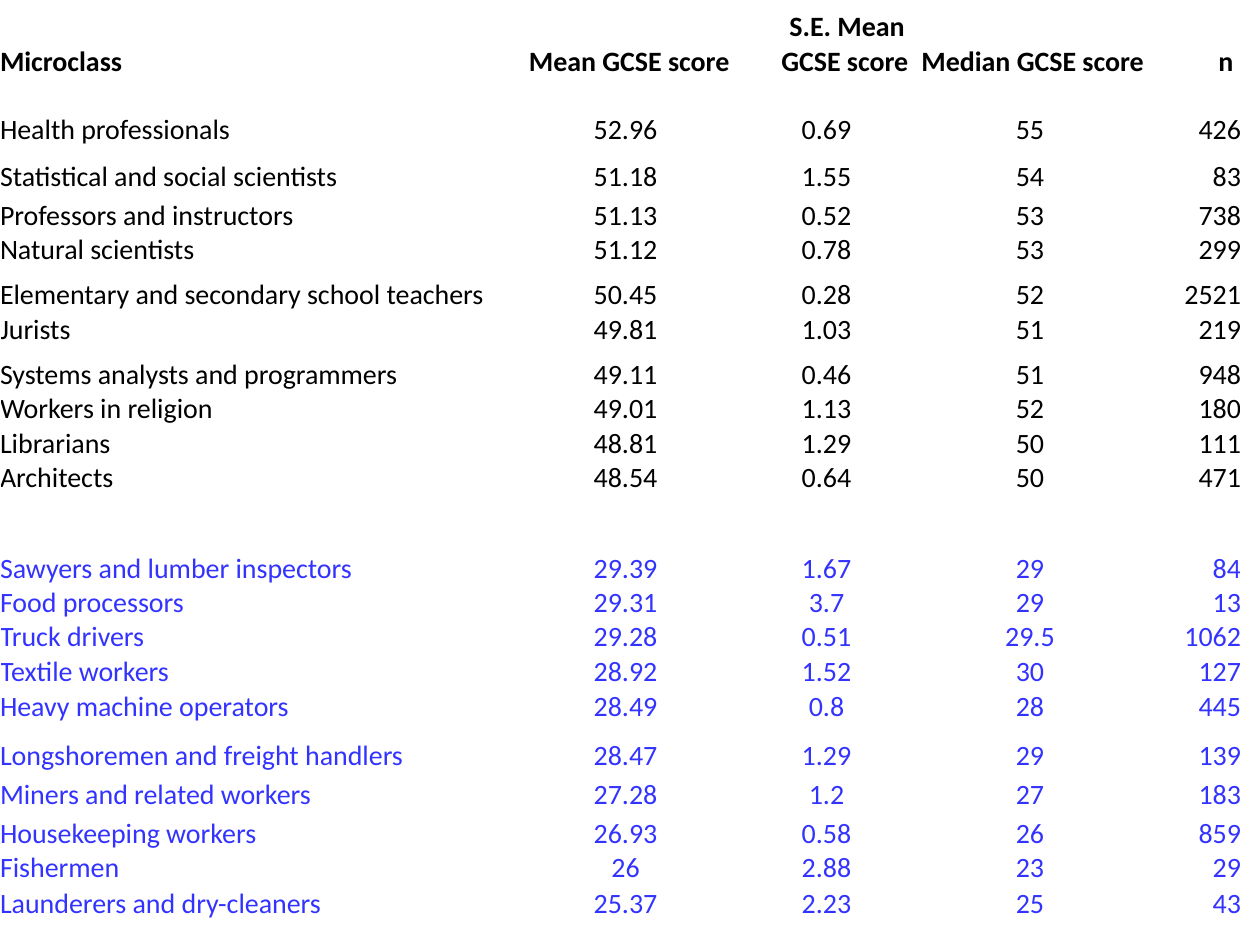
from dataclasses import dataclass

from lxml.etree import SubElement
from pptx import Presentation
from pptx.dml.color import RGBColor
from pptx.enum.text import MSO_ANCHOR, PP_ALIGN
from pptx.oxml.ns import qn
from pptx.util import Inches, Pt


@dataclass(frozen=True)
class Theme:
    font: str = "Calibri"
    size: int = 16
    top: RGBColor = RGBColor(0, 0, 0)
    bottom: RGBColor = RGBColor(0x33, 0x33, 0xFF)


THEME = Theme()
LEFT, CENTER, RIGHT = PP_ALIGN.LEFT, PP_ALIGN.CENTER, PP_ALIGN.RIGHT
BODY_ALIGN = (LEFT, CENTER, CENTER, CENTER, RIGHT)
COL_WIDTHS = (4.08, 1.77, 1.42, 1.81, 0.77)
LINE_HEIGHT = 0.27
TALL_ROWS = {4: 0.37, 5: 0.31, 7: 0.36, 9: 0.36, 14: 0.45,
             19: 0.28, 20: 0.39, 21: 0.31, 22: 0.31, 24: 0.28}
TALL_ROWS = {row: height for row, height in TALL_ROWS.items() if row < 14} | {
    14: 0.45, 18: 0.28, 19: 0.39, 20: 0.31, 21: 0.31, 23: 0.28}

HEADERS = (
    (0, 0, "Microclass", 0),
    (0, 1, "Mean GCSE score", 0.06),
    (0, 2, "S.E. Mean", 0.09),
    (1, 2, "GCSE score", 0.06),
    (0, 3, "Median GCSE score", 0),
    (0, 4, "n", 0.06),
)
HIGHEST = (
    ("Health professionals", "52.96", "0.69", "55", "426"),
    ("Statistical and social scientists", "51.18", "1.55", "54", "83"),
    ("Professors and instructors", "51.13", "0.52", "53", "738"),
    ("Natural scientists", "51.12", "0.78", "53", "299"),
    ("Elementary and secondary school teachers", "50.45", "0.28", "52", "2521"),
    ("Jurists", "49.81", "1.03", "51", "219"),
    ("Systems analysts and programmers", "49.11", "0.46", "51", "948"),
    ("Workers in religion", "49.01", "1.13", "52", "180"),
    ("Librarians", "48.81", "1.29", "50", "111"),
    ("Architects", "48.54", "0.64", "50", "471"),
)
LOWEST = (
    ("Sawyers and lumber inspectors", "29.39", "1.67", "29", "84"),
    ("Food processors", "29.31", "3.7", "29", "13"),
    ("Truck drivers", "29.28", "0.51", "29.5", "1062"),
    ("Textile workers", "28.92", "1.52", "30", "127"),
    ("Heavy machine operators", "28.49", "0.8", "28", "445"),
    ("Longshoremen and freight handlers", "28.47", "1.29", "29", "139"),
    ("Miners and related workers", "27.28", "1.2", "27", "183"),
    ("Housekeeping workers", "26.93", "0.58", "26", "859"),
    ("Fishermen", "26", "2.88", "23", "29"),
    ("Launderers and dry-cleaners", "25.37", "2.23", "25", "43"),
)
HIGHEST_ROW = 3
LOWEST_ROW = HIGHEST_ROW + len(HIGHEST) + 1
ROW_COUNT = LOWEST_ROW + len(LOWEST)


def clear_cell(cell):
    cell.fill.background()
    cell.vertical_anchor = MSO_ANCHOR.BOTTOM
    cell.margin_left = cell.margin_right = 0
    cell.margin_top = cell.margin_bottom = 0


def write_cell(cell, text, align, color, bold=False):
    p = cell.text_frame.paragraphs[0]
    p.text = text
    p.alignment = align
    font = p.runs[0].font
    font.name, font.size, font.bold = THEME.font, Pt(THEME.size), bold
    font.color.rgb = color


def size_empty_cells(table):
    for cell in table.iter_cells():
        if not cell.text_frame.text:
            p = cell.text_frame.paragraphs[0]
            SubElement(p._p, qn("a:endParaRPr"), sz=str(THEME.size * 100))


def add_headers(table):
    for col in (0, 1, 3, 4):
        table.cell(0, col).merge(table.cell(1, col))
    for row, col, text, inset in HEADERS:
        cell = table.cell(row, col)
        cell.margin_right = Inches(inset)
        write_cell(cell, text, RIGHT if col else LEFT, THEME.top, bold=True)


def add_group(table, first_row, records, color):
    for row, record in enumerate(records, first_row):
        for col, (text, align) in enumerate(zip(record, BODY_ALIGN)):
            write_cell(table.cell(row, col), text, align, color)


def add_score_table(s, left, top, width, height):
    table = s.shapes.add_table(ROW_COUNT, len(COL_WIDTHS), Inches(left),
                               Inches(top), Inches(width), Inches(height)).table
    table.first_row = table.horz_banding = False
    for column, col_width in zip(table.columns, COL_WIDTHS):
        column.width = Inches(col_width)
    for i, row in enumerate(table.rows):
        row.height = Inches(TALL_ROWS.get(i, LINE_HEIGHT))
    for cell in table.iter_cells():
        clear_cell(cell)
    add_headers(table)
    add_group(table, HIGHEST_ROW, HIGHEST, THEME.top)
    add_group(table, LOWEST_ROW, LOWEST, THEME.bottom)
    size_empty_cells(table)


def main():
    prs = Presentation()
    prs.slide_width, prs.slide_height = Inches(10), Inches(7.5)
    s = prs.slides.add_slide(prs.slide_layouts[6])
    add_score_table(s, 0, 0.08, 9.84, 7.18)
    prs.save("out.pptx")


if __name__ == "__main__":
    main()
